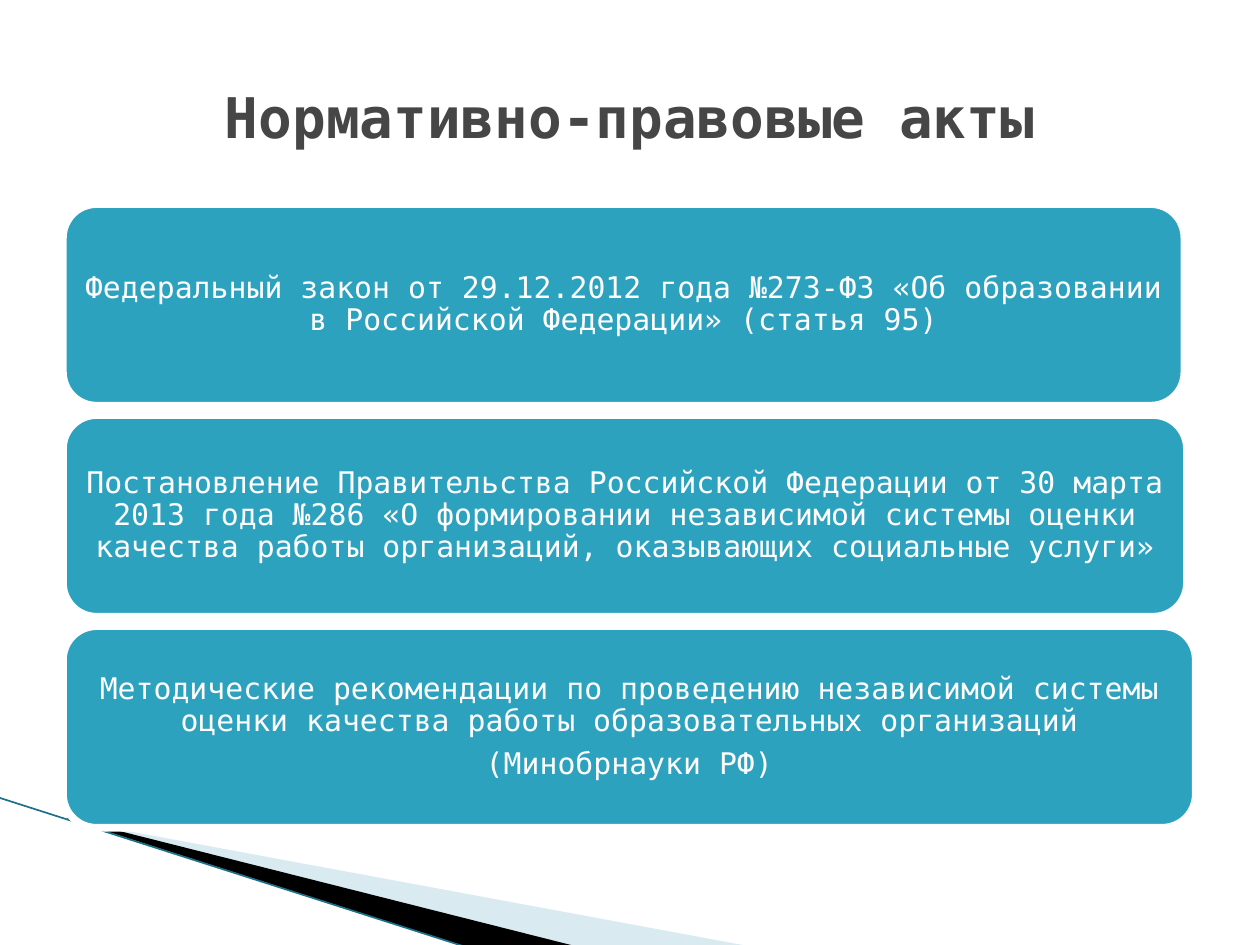
from lxml import etree
from pptx import Presentation
from pptx import util as u
from pptx.dml.color import RGBColor
from pptx.enum import shapes, text
from pptx.oxml.ns import qn

FONT = "DejaVu Sans Mono"
COLORS = {
    "teal": "2DA2BF",
    "white": "FFFFFF",
    "title": "464646",
    "pale": "A0CBDC",
    "black": "000000",
    "edge": "1C7088",
}


def rgb(name):
    return RGBColor.from_string(COLORS[name])


def write(tf, lines, size, color, bold=False):
    """Fill a text frame with centred paragraphs, one per line."""
    tf.word_wrap = True
    tf.vertical_anchor = text.MSO_ANCHOR.MIDDLE
    tf.text = "\n".join(lines)
    for p in tf.paragraphs:
        p.alignment = text.PP_ALIGN.CENTER
        for r in p.runs:
            r.font.name = FONT
            r.font.size = u.Pt(size)
            r.font.bold = bold
            r.font.color.rgb = rgb(color)


prs = Presentation()
prs.slide_width, prs.slide_height = u.Inches(10), u.Inches(7.5)
s = prs.slides.add_slide(prs.slide_layouts[6])

# Corner wedges: outline, colour, opacity in percent
wedges = [
    ([(0.55, 6.51), (5.95, 7.51), (4.56, 7.51), (0.55, 6.5)], "pale", 40),
    ([(0.53, 6.49), (4.57, 7.51), (3.72, 7.52), (0.54, 6.5)], "black", 100),
]
for points, color, opacity in wedges:
    start, *rest = [(u.Inches(x), u.Inches(y)) for x, y in points]
    builder = s.shapes.build_freeform(*start)
    builder.add_line_segments(rest, close=True)
    sp = builder.convert_to_shape()
    sp.shadow.inherit = False
    sp.fill.solid()
    sp.fill.fore_color.rgb = rgb(color)
    sp.line.fill.background()
    if opacity < 100:
        srgb = sp.fill._xPr.find(".//" + qn("a:srgbClr"))
        etree.SubElement(srgb, qn("a:alpha"), val=str(opacity * 1000))

edge = s.shapes.add_connector(
    shapes.MSO_CONNECTOR.STRAIGHT,
    u.Inches(-0.01), u.Inches(6.33), u.Inches(3.71), u.Inches(7.52))
edge.line.color.rgb = rgb("edge")
edge.line.width = u.Pt(0.95)
etree.SubElement(edge._element.spPr, qn("a:effectLst"))

# Legal acts: box width and paragraphs
acts = [
    (8.9, ["Федеральный закон от 29.12.2012 года №273-ФЗ «Об образовании "
           "в Российской Федерации» (статья 95)"]),
    (8.92, ["Постановление Правительства Российской Федерации от 30 марта "
            "2013 года №286 «О формировании независимой системы оценки "
            "качества работы организаций, оказывающих социальные услуги»"]),
    (8.99, ["Методические рекомендации по проведению независимой системы "
            "оценки качества работы образовательных организаций",
            "(Минобрнауки РФ)"]),
]
TOP, PITCH, HEIGHT = 1.62, 1.675, 1.6
for i, (width, lines) in enumerate(acts):
    sp = s.shapes.add_shape(
        shapes.MSO_SHAPE.ROUNDED_RECTANGLE,
        u.Inches(0.5), u.Inches(TOP + i * PITCH),
        u.Inches(width), u.Inches(HEIGHT))
    sp.shadow.inherit = False
    sp.fill.solid()
    sp.fill.fore_color.rgb = rgb("teal")
    sp.line.color.rgb = rgb("white")
    sp.line.width = u.Pt(4.33)
    tf = sp.text_frame
    tf.margin_left = tf.margin_right = u.Inches(0.07)
    tf.margin_top = tf.margin_bottom = u.Inches(0.04)
    write(tf, lines, 17, "white")
    for p in tf.paragraphs:
        p.line_spacing = 0.9
        p.space_after = u.Pt(6)

title = s.shapes.add_textbox(
    u.Inches(0.5), u.Inches(0.3), u.Inches(9), u.Inches(1.25))
write(title.text_frame, ["Нормативно-правовые акты"], 32, "title", bold=True)

prs.save("out.pptx")
